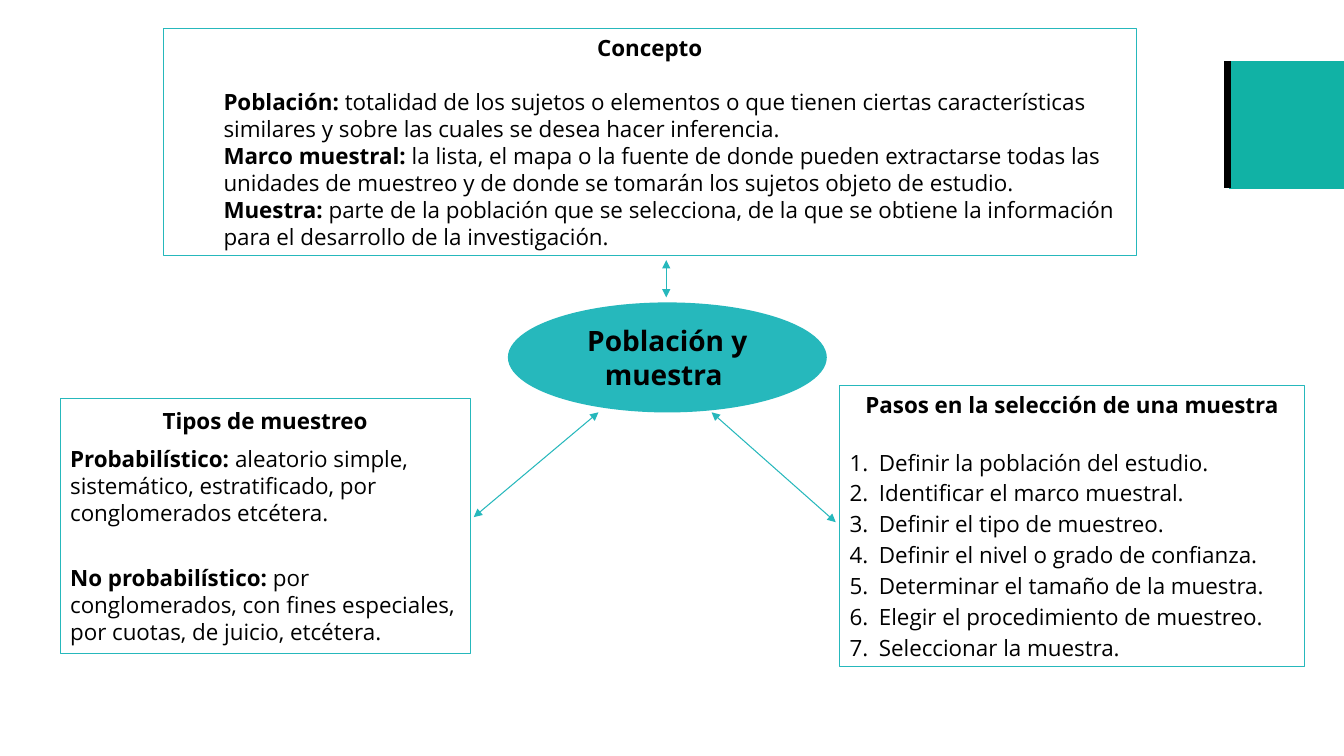
import pptx
import pptx.dml.color
import pptx.enum.shapes
import pptx.enum.text
import pptx.util
from pptx.oxml.ns import qn
from lxml import etree

Pt = pptx.util.Pt
MSO_SHAPE = pptx.enum.shapes.MSO_SHAPE
ALIGN = pptx.enum.text.PP_ALIGN
FONT, TEAL, GREEN, BLACK = "Open Sans", "26B8BC", "11B2A5", "000000"
BLANK_LINE = 19.3


def color(value):
    """Turn a hex string into a colour."""
    return pptx.dml.color.RGBColor.from_string(value)


def place(sp, x, y, w, h):
    """Move a shape to a box given in points."""
    sp.left, sp.top, sp.width, sp.height = Pt(x), Pt(y), Pt(w), Pt(h)


def add_text(tf, text="", label="", size=16, bold=False, align=ALIGN.LEFT,
             before=0, spacing=1.0, left=0, hanging=0, numbered=False):
    """Add a paragraph with an optional bold label before its text."""
    p = tf.paragraphs[0]
    if p.runs:
        p = tf.add_paragraph()
    pPr = p._p.get_or_add_pPr()
    pPr.set("marL", str(Pt(left)))
    pPr.set("indent", str(-Pt(hanging)))
    if numbered:
        etree.SubElement(pPr, qn("a:buFont"), typeface="+mj-lt")
        etree.SubElement(pPr, qn("a:buAutoNum"), type="arabicPeriod")
    else:
        etree.SubElement(pPr, qn("a:buNone"))
    p.alignment, p.line_spacing = align, spacing
    p.space_before, p.space_after = Pt(before), Pt(0)
    for content, strong in ((label, True), (text, bold)):
        if content:
            r = p.add_run()
            r.text = content
            r.font.name, r.font.size, r.font.bold = FONT, Pt(size), strong
            r.font.color.rgb = color(BLACK)


def set_frame(sp):
    """Prepare the text frame of a shape and return it."""
    tf = sp.text_frame
    tf.word_wrap = True
    tf.auto_size = pptx.enum.text.MSO_AUTO_SIZE.NONE
    tf.vertical_anchor = pptx.enum.text.MSO_ANCHOR.MIDDLE
    tf.margin_left = tf.margin_right = Pt(7.2)
    tf.margin_top = tf.margin_bottom = Pt(3.6)
    return tf


def add_block(s, kind, x, y, w, h, fill):
    """Add a filled shape without an outline."""
    sp = s.shapes.add_shape(kind, Pt(x), Pt(y), Pt(w), Pt(h))
    sp.shadow.inherit = False
    sp.fill.solid()
    sp.fill.fore_color.rgb = color(fill)
    sp.line.fill.background()
    return sp


def add_line(s, x1, y1, x2, y2, line=TEAL, width=0.75, arrows=True):
    """Add a straight line, with arrowheads at both ends if wanted."""
    c = s.shapes.add_connector(pptx.enum.shapes.MSO_CONNECTOR.STRAIGHT,
                               Pt(x1), Pt(y1), Pt(x2), Pt(y2))
    c.line.color.rgb = color(line)
    c.line.width = Pt(width)
    if arrows:
        ln = c.line._get_or_add_ln()
        for end in ("a:headEnd", "a:tailEnd"):
            etree.SubElement(ln, qn(end), type="triangle")
    etree.SubElement(c._element.spPr, qn("a:effectLst"))


def add_panel(s, heading, x, y, w, h, sp=None):
    """Outline a panel, write its heading and return its text frame."""
    if sp is None:
        sp = s.shapes.add_shape(MSO_SHAPE.RECTANGLE, 0, 0, 0, 0)
        sp.shadow.inherit = False
    place(sp, x, y, w, h)
    sp.fill.background()
    sp.line.color.rgb = color(TEAL)
    sp.line.width = Pt(0.75)
    tf = set_frame(sp)
    add_text(tf, heading, bold=True, align=ALIGN.CENTER)
    return tf


def add_corner(s, x, y, w, h):
    """Draw the green corner block with its black edge."""
    add_block(s, MSO_SHAPE.RECTANGLE, x + 1.5, y, w - 1.5, h, GREEN)
    add_line(s, x, y, x, y + h - 0.7, BLACK, 5, False)


def add_topic(s, x, y, w, h):
    """Place the slide title on the central ellipse."""
    oval = add_block(s, MSO_SHAPE.OVAL, x, y, w, h, TEAL)
    s.shapes._spTree.insert(2, oval._element)
    place(s.shapes.title, x + 0.15 * w, y + 0.15 * h, 0.7 * w, 0.7 * h)
    add_text(set_frame(s.shapes.title), "Población y muestra ", size=20,
             bold=True, align=ALIGN.CENTER)


def add_concepts(s, *box):
    """Write the panel of definitions."""
    tf = add_panel(s, "Concepto", *box)
    definitions = (
        ("Población: ", "totalidad de los sujetos o elementos o que tienen ciertas "
         "características similares y sobre las cuales se desea hacer inferencia."),
        ("Marco muestral: ", "la lista, el mapa o la fuente de donde pueden extractarse "
         "todas las unidades de muestreo y de donde se tomarán los sujetos objeto de estudio."),
        ("Muestra: ", "parte de la población que se selecciona, de la que se obtiene la "
         "información para el desarrollo de la investigación."))
    for i, (label, text) in enumerate(definitions):
        add_text(tf, text, label, left=36, before=0 if i else BLANK_LINE)


def add_types(s, *box):
    """Write the panel of sampling types."""
    tf = add_panel(s, "Tipos de muestreo", *box)
    add_text(tf, "aleatorio simple, sistemático, estratificado, por conglomerados etcétera.",
             "Probabilístico: ", before=8)
    add_text(tf, "por conglomerados, con fines especiales, por cuotas, de juicio, etcétera.",
             "No probabilístico: ", before=8 + BLANK_LINE)


def add_steps(s, *box):
    """Write the numbered steps in the body placeholder."""
    tf = add_panel(s, "Pasos en la selección de una muestra", *box, sp=s.placeholders[1])
    steps = ("Definir la población del estudio.", "Identificar el marco muestral.",
             "Definir el tipo de muestreo.", "Definir el nivel o grado de confianza.",
             "Determinar el tamaño de la muestra.", "Elegir el procedimiento de muestreo.",
             "Seleccionar la muestra.")
    for i, step in enumerate(steps):
        add_text(tf, step, before=0 if i else BLANK_LINE, spacing=1.15,
                 left=21, hanging=21, numbered=True)


def main():
    """Build the slide and save it."""
    prs = pptx.Presentation()
    prs.slide_width, prs.slide_height = Pt(960), Pt(540)
    s = prs.slides.add_slide(prs.slide_layouts[1])
    add_corner(s, 876.5, 43.7, 83.5, 91.3)
    add_topic(s, 362.8, 216, 227.8, 78.6)
    add_concepts(s, 116.6, 20.2, 695, 162.4)
    add_steps(s, 599.6, 275.2, 332.4, 200.8)
    add_types(s, 43, 285, 292.8, 181.6)
    for ends in ((427.5, 294.5, 338.4, 369.4), (508.3, 294.5, 597, 373),
                 (475.9, 185.8, 475.9, 212.4)):
        add_line(s, *ends)
    prs.save("out.pptx")


if __name__ == "__main__":
    main()
